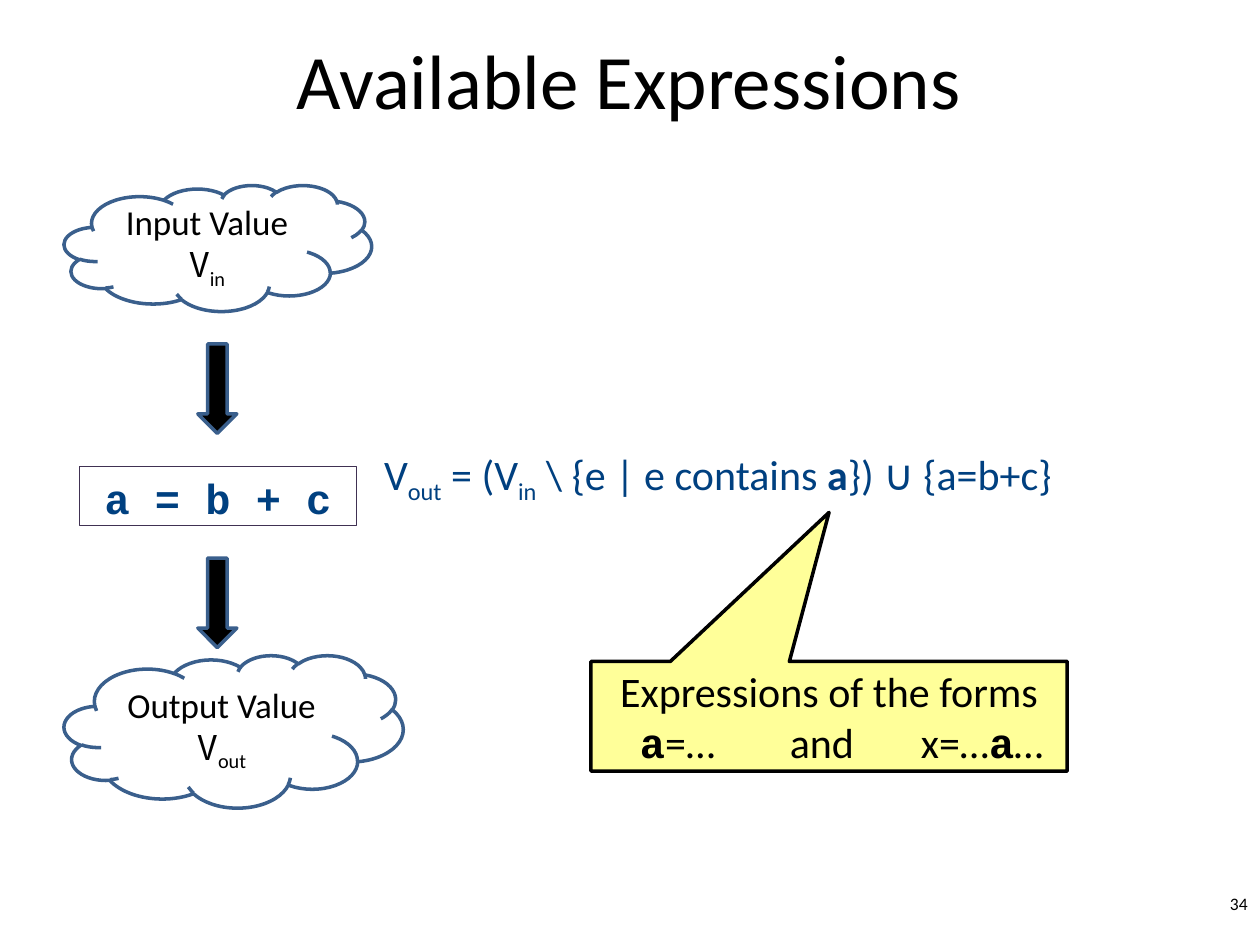
import pptx
import pptx.util
import pptx.dml.color
import pptx.enum.shapes
import pptx.enum.text
import pptx.oxml.ns
from lxml import etree

SHAPE = pptx.enum.shapes.MSO_SHAPE
ALIGN = pptx.enum.text.PP_ALIGN
ANCHOR = pptx.enum.text.MSO_ANCHOR
WIDTH, HEIGHT = pptx.util.Inches(10), pptx.util.Inches(7.5)
COLS, ROWS = 100, 75
BLACK, NAVY, STEEL, PLUM, YELLOW = "000000", "004080", "3A5F8C", "403152", "FFFF99"
CODE = {"font": "Courier New", "bold": True}
SUB = {"sub": True}


def color(hex_string):
    return pptx.dml.color.RGBColor.from_string(hex_string)


def place(box):
    """Turn columns and rows of the slide grid into lengths."""
    x, y, w, h = box
    return (round(x * WIDTH / COLS), round(y * HEIGHT / ROWS),
            round(w * WIDTH / COLS), round(h * HEIGHT / ROWS))


def within(box, x, y, w, h):
    return box[0] + x, box[1] + y, w, h


def add_text(sp, *lines, size=24, ink=BLACK, align=ALIGN.CENTER, anchor=ANCHOR.MIDDLE, wrap=True):
    """Write each line as a paragraph; a line is a list of (text, run format) pairs."""
    tf = sp.text_frame
    tf.word_wrap = wrap
    tf.vertical_anchor = anchor
    for i, line in enumerate(lines):
        p = tf.paragraphs[0] if i == 0 else tf.add_paragraph()
        p.alignment = align
        for text, look in line:
            r = p.add_run()
            r.text = text
            r.font.name = look.get("font", "Calibri")
            r.font.size = pptx.util.Pt(size)
            r.font.bold = look.get("bold", False)
            r.font.color.rgb = color(ink)
            if look.get("sub"):
                r.font._element.set("baseline", "-25000")
    return tf


def add_textbox(s, box, *lines, **text_format):
    return add_text(s.shapes.add_textbox(*place(box)), *lines, **text_format)


def add_shape(s, kind, box, fill=None, line=STEEL, weight=2):
    sp = s.shapes.add_shape(kind, *place(box))
    sp.shadow.inherit = False
    if fill:
        sp.fill.solid()
        sp.fill.fore_color.rgb = color(fill)
    else:
        sp.fill.background()
    sp.line.color.rgb = color(line)
    sp.line.width = pptx.util.Pt(weight)
    return sp


def set_tabs(p, *columns):
    tabs = etree.SubElement(p._p.get_or_add_pPr(), pptx.oxml.ns.qn("a:tabLst"))
    for column in columns:
        etree.SubElement(tabs, pptx.oxml.ns.qn("a:tab"),
                         pos=str(round(column * WIDTH / COLS)), algn="l")


def add_flow(s, box):
    """Input value, statement and output value, joined by block arrows."""
    statement = add_shape(s, SHAPE.RECTANGLE, within(box, 1.2, 22.3, 22, 4.7),
                          line=PLUM, weight=0.75)
    add_text(statement, [("a = b + c", CODE)], ink=NAVY, anchor=ANCHOR.TOP)
    for y in (12.6, 29.6):
        add_shape(s, SHAPE.DOWN_ARROW, within(box, 10.6, y, 3.1, 7.1), fill=BLACK)
    for name, sub, y, w, h in (("Input Value", "in", 0, 24.4, 10),
                               ("Output Value", "out", 37.3, 26.9, 12.1)):
        cloud = add_shape(s, SHAPE.CLOUD, within(box, 0, y, w, h))
        add_text(cloud, [(name, {})], [("V", {"font": "Noto Sans Mono"}), (sub, SUB)], size=20)


def add_transfer_rule(s, box):
    """The equation, with a callout that explains its removed expressions."""
    add_textbox(s, within(box, 0, 0, 65.4, 5),
                [("V", {}), ("out", SUB), (" = (V", {}), ("in", SUB),
                 (" \\ {e | e contains ", {}), ("a", {"bold": True}), ("}) ∪ {a=b+c}", {})],
                ink=NAVY, align=ALIGN.LEFT, anchor=ANCHOR.TOP)
    callout = add_shape(s, SHAPE.RECTANGULAR_CALLOUT, within(box, 17.4, 17.4, 37.8, 8.7),
                        fill=YELLOW, line=BLACK)
    callout.adjustments[0], callout.adjustments[1] = 0, -1.86
    tf = add_text(callout, [("Expressions of the forms", {})],
                  [("\t", {}), ("a", CODE), ("=…\tand\tx=…", {}), ("a", CODE), ("…", {})])
    forms = tf.paragraphs[1]
    forms.alignment = ALIGN.LEFT
    set_tabs(forms, 2.9, 14.8, 25.2)


def main():
    prs = pptx.Presentation()
    prs.slide_width, prs.slide_height = WIDTH, HEIGHT
    s = prs.slides.add_slide(prs.slide_layouts[6])
    add_textbox(s, (7.4, 0, 85, 12.5), [("Available Expressions", {})], size=44)
    add_flow(s, (5.1, 14.7, 26.9, 49.4))
    add_transfer_rule(s, (29.5, 35.1, 65.4, 26.1))
    add_textbox(s, (79.2, 70.4, 20.8, 3), [("34", {})], size=10,
                align=ALIGN.RIGHT, anchor=ANCHOR.TOP)
    prs.save("out.pptx")


if __name__ == "__main__":
    main()
